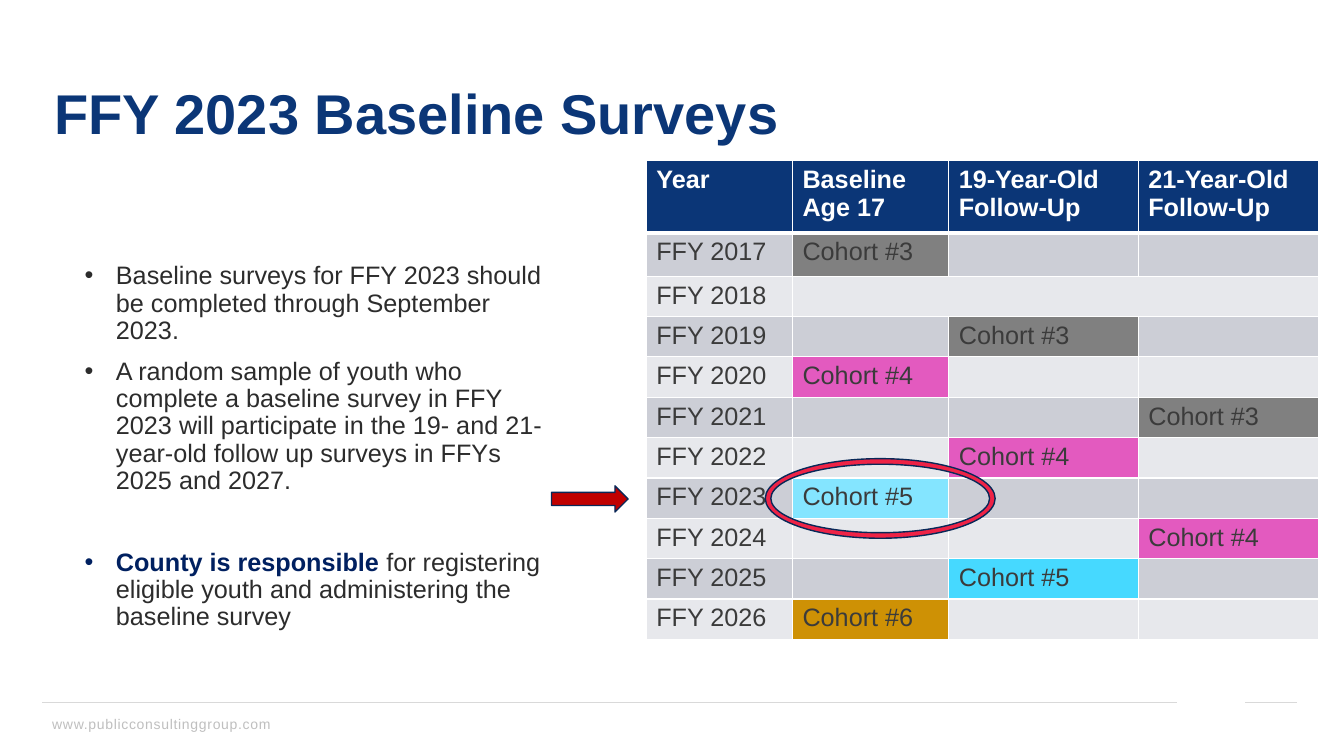
from lxml.etree import SubElement
from pptx import Presentation
from pptx.dml.color import RGBColor
from pptx.enum.shapes import MSO_CONNECTOR, MSO_SHAPE
from pptx.enum.text import MSO_ANCHOR, MSO_AUTO_SIZE, PP_ALIGN
from pptx.oxml.ns import qn
from pptx.util import Inches, Pt

NAVY, INK, WHITE, RULE = "0B3677", "2C2C2C", "FFFFFF", "D9D9D9"
TABLE_INK, OUTLINE = "3B3B3B", "082858"
BANDS = ["CCCED6", "E7E8EC"]
GREY, PINK, PALE_CYAN, CYAN, GOLD = "808080", "E35ABF", "84E5FF", "46D9FF", "CE9105"

HEADERS = ["Year", "Baseline\nAge 17", "19-Year-Old\nFollow-Up", "21-Year-Old\nFollow-Up"]
FIRST_YEAR, LAST_YEAR = 2017, 2026
# (year, column): (cohort number, fill)
COHORTS = {
    (2017, 1): (3, GREY), (2019, 2): (3, GREY), (2021, 3): (3, GREY),
    (2020, 1): (4, PINK), (2022, 2): (4, PINK), (2024, 3): (4, PINK),
    (2023, 1): (5, PALE_CYAN), (2025, 2): (5, CYAN),
    (2026, 1): (6, GOLD),
}
BULLETS = [
    (10, [("Baseline surveys for FFY 2023 should be completed through September 2023.", {})]),
    (10, [("A random sample of youth who complete a baseline survey in FFY 2023 will "
           "participate in the 19- and 21-year-old follow up surveys in FFYs 2025 and 2027.", {})]),
    (39, [("County is responsible ", {"color": "002060", "bold": True}),
          ("for registering eligible youth and administering the baseline survey", {})]),
]


def rgb(value):
    return RGBColor.from_string(value)


def add_text(para, text, size=18, color=INK, bold=False, spacing=None):
    span = para.add_run()
    span.text = text
    font = span.font
    font.name, font.size, font.bold = "Arial", Pt(size), bold
    font.color.rgb = rgb(color)
    if spacing:
        font._element.set("spc", str(int(spacing * 100)))


def place(shape, box):
    shape.left, shape.top, shape.width, shape.height = (Inches(v) for v in box)


def add_bullet(para):
    properties = para._p.get_or_add_pPr()
    properties.set("marL", str(Inches(0.31)))
    properties.set("indent", str(-Inches(0.31)))
    SubElement(properties, qn("a:buFont"), typeface="Arial")
    SubElement(properties, qn("a:buChar"), char="•")


def add_title(page, box):
    title = page.shapes.title
    place(title, box)
    frame = title.text_frame
    frame.vertical_anchor = MSO_ANCHOR.MIDDLE
    frame.auto_size = MSO_AUTO_SIZE.NONE
    para = frame.paragraphs[0]
    para.alignment, para.line_spacing = PP_ALIGN.LEFT, 0.9
    add_text(para, "FFY 2023 Baseline Surveys", size=40, color=NAVY, bold=True)


def add_body(page, box):
    body = page.placeholders[1]
    place(body, box)
    frame = body.text_frame
    frame.auto_size = MSO_AUTO_SIZE.NONE
    for index, (gap, spans) in enumerate(BULLETS):
        para = frame.add_paragraph() if index else frame.paragraphs[0]
        add_bullet(para)
        para.line_spacing = 0.9
        para.space_before = Pt(gap if index else 0)
        for text, style in spans:
            add_text(para, text, **style)


def set_borders(cell, top=1, bottom=1):
    properties = cell._tc.get_or_add_tcPr()
    for side, width in (("L", 1), ("R", 1), ("T", top), ("B", bottom)):
        line = SubElement(properties, qn(f"a:ln{side}"), w=str(Pt(width)))
        fill = SubElement(line, qn("a:solidFill"))
        SubElement(fill, qn("a:srgbClr"), val=WHITE)


def fill_cell(cell, text, fill, color=TABLE_INK, bold=False, **borders):
    set_borders(cell, **borders)
    cell.fill.solid()
    cell.fill.fore_color.rgb = rgb(fill)
    for index, line in enumerate(text.split("\n")):
        para = cell.text_frame.add_paragraph() if index else cell.text_frame.paragraphs[0]
        if line:
            add_text(para, line, color=color, bold=bold)
        else:
            para.font.size = Pt(18)


def add_schedule(page, box):
    years = range(FIRST_YEAR, LAST_YEAR + 1)
    frame = page.shapes.add_table(len(years) + 1, len(HEADERS), *(Inches(v) for v in box))
    table = frame.table
    for column, width in zip(table.columns, (1.45, 1.55, 1.88, 1.79)):
        column.width = Inches(width)
    for row, height in zip(table.rows, [0.72, 0.43] + [0.4] * (len(years) - 1)):
        row.height = Inches(height)

    # Header row
    for column, text in enumerate(HEADERS):
        fill_cell(table.cell(0, column), text, NAVY, color=WHITE, bold=True, bottom=3)

    # One row per year, with the cohort surveyed in it
    for row, year in enumerate(years, start=1):
        band = BANDS[(row - 1) % 2]
        top = 3 if row == 1 else 1
        fill_cell(table.cell(row, 0), f"FFY {year}", band, top=top)
        for column in range(1, len(HEADERS)):
            number, fill = COHORTS.get((year, column), (None, band))
            text = f"Cohort #{number}" if number else ""
            fill_cell(table.cell(row, column), text, fill, top=top)
    gap_row = 2018 - FIRST_YEAR + 1
    table.cell(gap_row, 1).merge(table.cell(gap_row, 3))


def add_marker(page, kind, box, fill):
    marker = page.shapes.add_shape(kind, *(Inches(v) for v in box))
    marker.shadow.inherit = False
    marker.fill.solid()
    marker.fill.fore_color.rgb = rgb(fill)
    marker.line.color.rgb = rgb(OUTLINE)
    marker.line.width = Pt(1)
    return marker


def add_footer(page, box):
    left, top, width, height = box
    # Two rules, split where the page number would sit
    for start, end in ((left, left + 11.25), (left + 11.93, left + width)):
        rule = page.shapes.add_connector(
            MSO_CONNECTOR.STRAIGHT, Inches(start), Inches(top), Inches(end), Inches(top))
        rule.line.color.rgb = rgb(RULE)
        rule.line.width = Pt(0.5)
        SubElement(rule._element.spPr, qn("a:effectLst"))
    # Web address
    address = page.shapes.add_textbox(
        Inches(left), Inches(top + 0.08), Inches(3.87), Inches(height - 0.08))
    address.text_frame.word_wrap = True
    add_text(address.text_frame.paragraphs[0], "www.publicconsultinggroup.com",
             size=10, color="BFBFBF", spacing=0.5)


def main():
    deck = Presentation()
    deck.slide_width, deck.slide_height = Inches(13.33), Inches(7.5)
    page = deck.slides.add_slide(deck.slide_layouts[1])
    add_footer(page, (0.42, 6.97, 12.44, 0.36))
    add_title(page, (0.44, 0.43, 12.46, 1.45))
    add_body(page, (0.74, 2.56, 4.89, 3.94))
    add_schedule(page, (6.41, 1.59, 6.67, 4.75))
    # Arrow and ring that point out the current year
    add_marker(page, MSO_SHAPE.RIGHT_ARROW, (5.47, 4.82, 0.76, 0.26), "C00000")
    ring = add_marker(page, MSO_SHAPE.DONUT, (7.59, 4.55, 2.28, 0.79), "EE2346")
    ring.adjustments[0] = 0.07
    deck.save("out.pptx")


if __name__ == "__main__":
    main()
